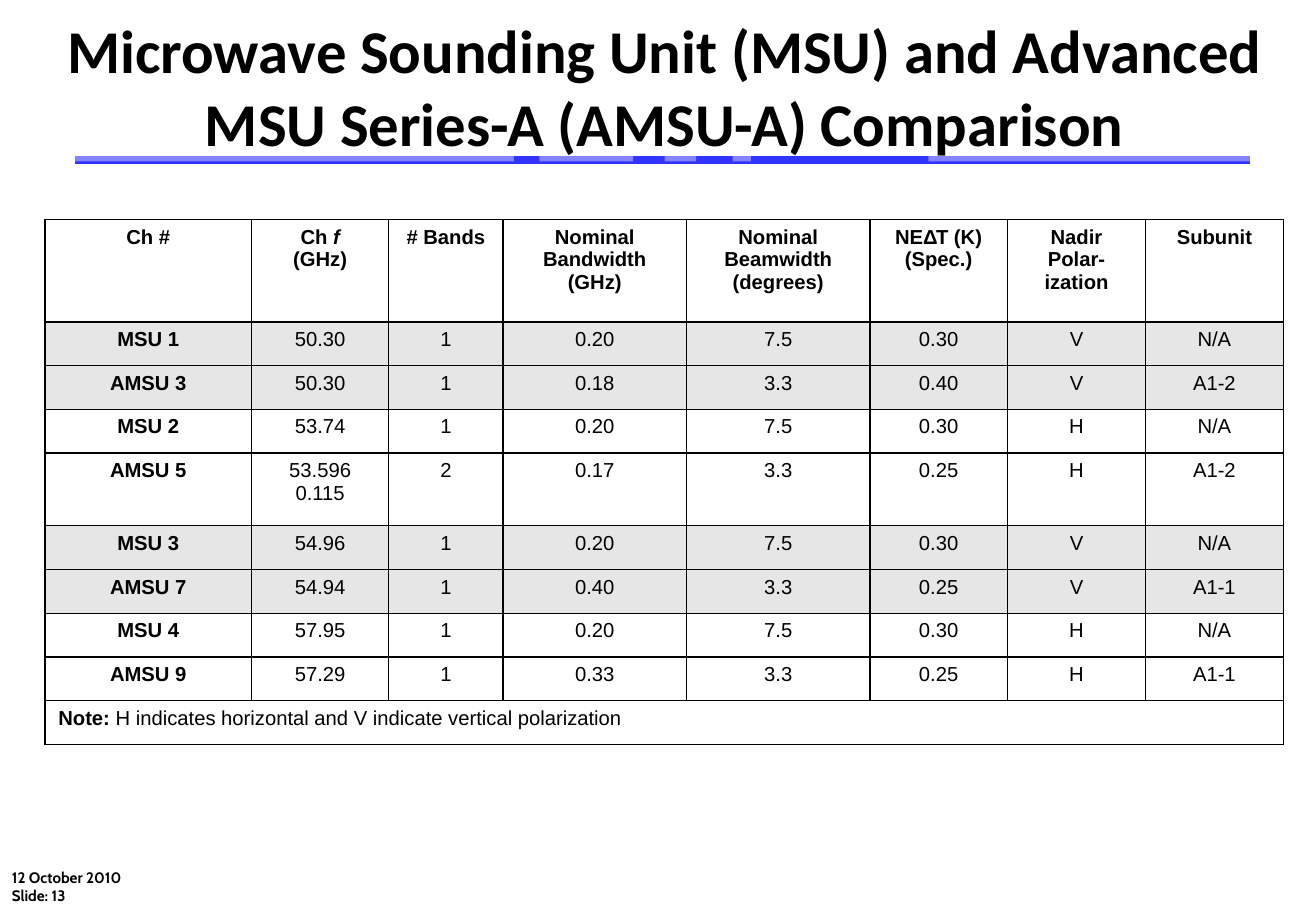
from pptx import Presentation
from pptx.dml.color import RGBColor
from pptx.enum.shapes import MSO_CONNECTOR, MSO_SHAPE
from pptx.enum.text import PP_ALIGN
from pptx.oxml.xmlchemy import OxmlElement as Element
from pptx.util import Inches, Pt

BLACK = RGBColor(0x00, 0x00, 0x00)
WHITE = RGBColor(0xFF, 0xFF, 0xFF)
BLUE = RGBColor(0x33, 0x33, 0xFF)
GRAY = RGBColor(0xE6, 0xE6, 0xE6)

# Content: a cell is a list of paragraphs, a paragraph a list of (text, style)
TITLE = "Microwave Sounding Unit (MSU) and Advanced MSU Series-A (AMSU-A) Comparison"
FOOTER = ["12 October 2010", "Slide: 13"]
HEADER = [
    [[("Ch #", "b")]],
    [[("Ch ", "b"), ("f", "bi")], [("(GHz)", "b")]],
    [[("# Bands", "b")]],
    [[("Nominal Bandwidth (GHz)", "b")]],
    [[("Nominal Beamwidth (degrees)", "b")]],
    [[("ΝΕΔΤ (K)", "b")], [("(Spec.)", "b")]],
    [[("Nadir Polar-ization", "b")]],
    [[("Subunit", "b")]],
]
CHANNELS = [
    ("MSU 1", "50.30", "1", "0.20", "7.5", "0.30", "V", "N/A"),
    ("AMSU 3", "50.30", "1", "0.18", "3.3", "0.40", "V", "A1-2"),
    ("MSU 2", "53.74", "1", "0.20", "7.5", "0.30", "H", "N/A"),
    ("AMSU 5", "53.596\n0.115", "2", "0.17", "3.3", "0.25", "H", "A1-2"),
    ("MSU 3", "54.96", "1", "0.20", "7.5", "0.30", "V", "N/A"),
    ("AMSU 7", "54.94", "1", "0.40", "3.3", "0.25", "V", "A1-1"),
    ("MSU 4", "57.95", "1", "0.20", "7.5", "0.30", "H", "N/A"),
    ("AMSU 9", "57.29", "1", "0.33", "3.3", "0.25", "H", "A1-1"),
]
NOTE = [[("Note:", "b"),
         (" H indicates horizontal and V indicate vertical polarization", "")]]

COL_WIDTHS = [1.7, 1.13, 0.94, 1.51, 1.51, 1.13, 1.14, 1.13]
ROW_HEIGHTS = [0.84, 0.36, 0.36, 0.36, 0.6, 0.36, 0.36, 0.36, 0.36, 0.36]
THIN, THICK = 0.75, 1
VEILS = [(0.01, 4.22), (4.44, 0.77), (5.47, 0.26), (6.03, 0.15), (7.64, 3.2)]


def write(tf, paragraphs, font, size, align):
    tf.word_wrap = True
    for i, runs in enumerate(paragraphs):
        p = tf.add_paragraph() if i else tf.paragraphs[0]
        p.alignment = align
        for text, style in runs:
            r = p.add_run()
            r.text = text
            r.font.name, r.font.size = font, Pt(size)
            r.font.bold, r.font.italic = "b" in style, "i" in style
            r.font.color.rgb = BLACK


def add_text(s, box, paragraphs, font, size, align):
    tf = s.shapes.add_textbox(*map(Inches, box)).text_frame
    write(tf, paragraphs, font, size, align)


def set_borders(cell, widths):
    tc_pr = cell._tc.get_or_add_tcPr()
    for side, width in zip("LRTB", widths):
        ln = Element(f"a:ln{side}")
        ln.set("w", str(Pt(width)))
        fill, color = Element("a:solidFill"), Element("a:srgbClr")
        color.set("val", str(BLACK))
        fill.append(color)
        ln.append(fill)
        tc_pr.append(ln)


prs = Presentation()
prs.slide_width, prs.slide_height = Inches(10.83), Inches(7.5)
s = prs.slides.add_slide(prs.slide_layouts[6])

# Footer
add_text(s, (0, 7.1, 6.86, 0.4), [[(line, "b")] for line in FOOTER],
         "Cabin", 9, PP_ALIGN.LEFT)

# Rule under the title, lightened by translucent white strips
rule = s.shapes.add_connector(MSO_CONNECTOR.STRAIGHT, Inches(0.62), Inches(1.32),
                              Inches(10.29), Inches(1.32))
rule.line.color.rgb, rule.line.width = BLUE, Pt(4.5)
rule._element.spPr.append(Element("a:effectLst"))
for left, width in VEILS:
    sp = s.shapes.add_shape(MSO_SHAPE.RECTANGLE, Inches(left), Inches(1.19),
                            Inches(width), Inches(0.14))
    sp.shadow.inherit = False
    sp.line.fill.background()
    sp.fill.solid()
    sp.fill.fore_color.rgb = WHITE
    alpha = Element("a:alpha")
    alpha.set("val", "40000")
    sp._element.spPr.xpath("./a:solidFill/a:srgbClr")[0].append(alpha)

# Title
add_text(s, (0.43, 0.06, 10.08, 1.31), [[(TITLE, "b")]],
         "Calibri", 36, PP_ALIGN.CENTER)

# Table
rows = [HEADER]
for channel in CHANNELS:
    rows.append([[[(line, "" if c else "b")] for line in text.split("\n")]
                 for c, text in enumerate(channel)])
rows.append([NOTE])
note_row = len(rows) - 1

table = s.shapes.add_table(len(rows), len(COL_WIDTHS), Inches(0.37), Inches(1.81),
                           Inches(10.2), Inches(4.33)).table
table.first_row = table.horz_banding = False
for column, width in zip(table.columns, COL_WIDTHS):
    column.width = Inches(width)
for row, height in zip(table.rows, ROW_HEIGHTS):
    row.height = Inches(height)
table.cell(note_row, 0).merge(table.cell(note_row, len(COL_WIDTHS) - 1))

for r_no, row in enumerate(table.rows):
    shaded = r_no in (1, 2, 5, 6)
    name_edge = THIN if r_no in (5, 6, note_row) else THICK
    for c_no, cell in enumerate(row.cells):
        set_borders(cell, (name_edge if c_no == 1 else THIN,
                           name_edge if c_no == 0 else THIN,
                           THICK if r_no == 1 else THIN,
                           THICK if r_no == 0 else THIN))
        if shaded:
            cell.fill.solid()
            cell.fill.fore_color.rgb = GRAY
        else:
            cell.fill.background()
        cell.margin_left = cell.margin_right = Inches(0.11)
        cell.margin_top = cell.margin_bottom = Inches(0.05)
        if c_no < len(rows[r_no]):
            write(cell.text_frame, rows[r_no][c_no], "Arial", 12,
                  PP_ALIGN.LEFT if r_no == note_row else PP_ALIGN.CENTER)

prs.save("out.pptx")
